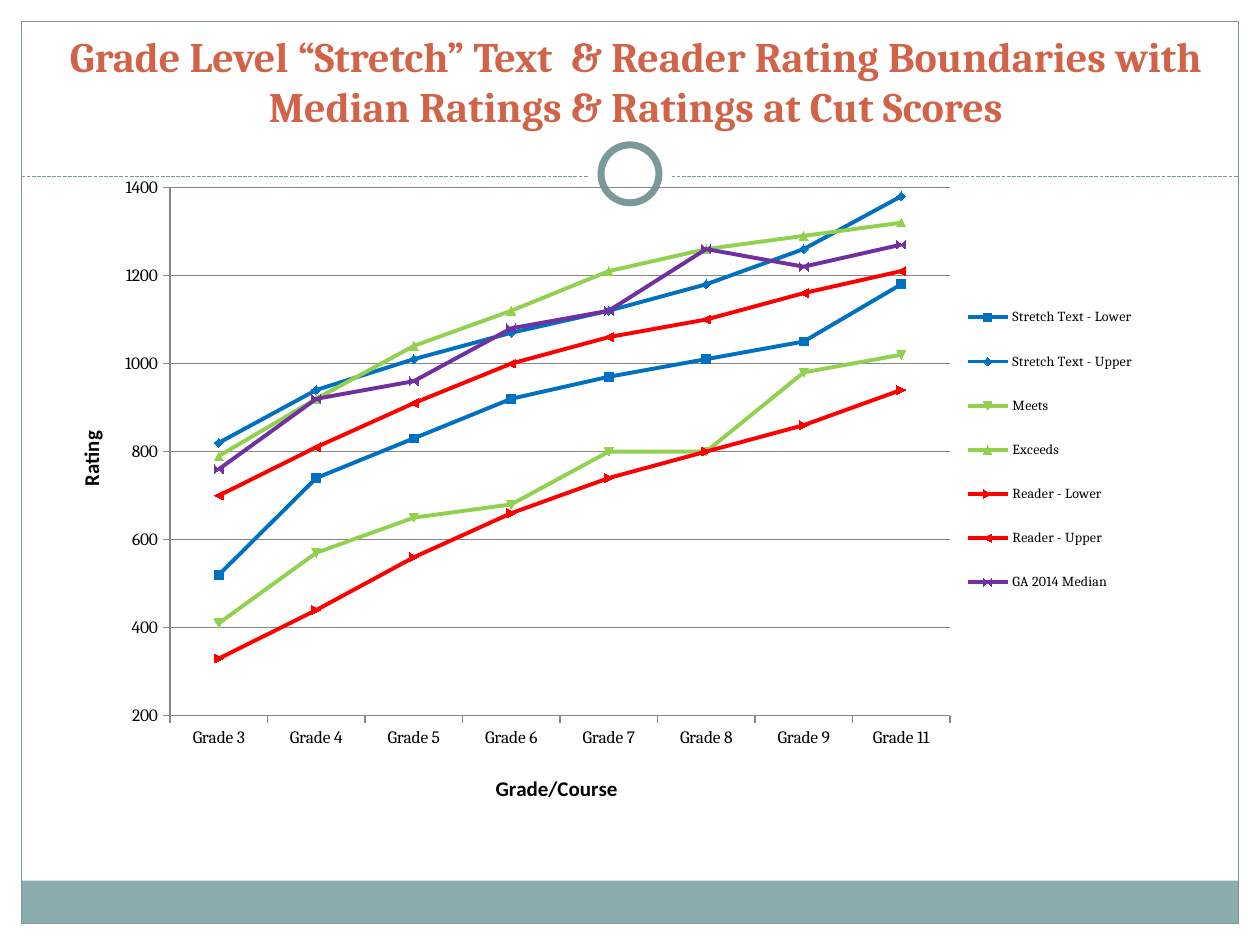
from lxml import etree
from pptx import Presentation
from pptx import util as u
from pptx.chart.data import CategoryChartData
from pptx.dml.color import RGBColor
from pptx.enum import chart as ch, dml, shapes, text
from pptx.oxml.ns import qn

Inches, Pt = u.Inches, u.Pt
TEAL, BAND, CORAL, GREY, BLACK = "7C999A", "8CADAE", "D16349", "868686", "000000"
BLUE, GREEN, RED, PURPLE = "0070C0", "92D050", "FF0000", "7030A0"
GRADES = [f"Grade {number}" for number in (3, 4, 5, 6, 7, 8, 9, 11)]
SERIES = [
    ("Stretch Text - Lower", BLUE, (520, 740, 830, 920, 970, 1010, 1050, 1180)),
    ("Stretch Text - Upper", BLUE, (820, 940, 1010, 1070, 1120, 1180, 1260, 1380)),
    ("Meets", GREEN, (410, 570, 650, 680, 800, 800, 980, 1020)),
    ("Exceeds", GREEN, (790, 920, 1040, 1120, 1210, 1260, 1290, 1320)),
    ("Reader - Lower", RED, (330, 440, 560, 660, 740, 800, 860, 940)),
    ("Reader - Upper", RED, (700, 810, 910, 1000, 1060, 1100, 1160, 1210)),
    ("GA 2014 Median", PURPLE, (760, 920, 960, 1080, 1120, 1260, 1220, 1270)),
]


def rgb(value):
    return RGBColor.from_string(value)


def set_font(font, size, color, name="Cambria", bold=False):
    font.name, font.size, font.bold = name, Pt(size), bold
    font.color.rgb = rgb(color)


def set_line(line, color, width):
    line.color.rgb = rgb(color)
    line.width = Pt(width)


def add_shape(page, kind, box, fill=None, line=None, width=0.75):
    shape = page.shapes.add_shape(kind, *map(Inches, box))
    shape.shadow.inherit = False
    if fill:
        shape.fill.solid()
        shape.fill.fore_color.rgb = rgb(fill)
    else:
        shape.fill.background()
    if line:
        set_line(shape.line, line, width)
    else:
        shape.line.fill.background()


def add_frame(page, box):
    left, top, width, height = box
    right, bottom, middle = left + width, top + height, left + width / 2
    rule, center, band = 1.4, 1.38, 0.34
    rectangle, oval = shapes.MSO_SHAPE.RECTANGLE, shapes.MSO_SHAPE.OVAL
    add_shape(page, rectangle, (left, bottom - band, width, band), BAND)
    add_shape(page, rectangle, box, line=TEAL)
    divider = page.shapes.add_connector(
        shapes.MSO_CONNECTOR.STRAIGHT,
        Inches(left), Inches(rule), Inches(right), Inches(rule))
    set_line(divider.line, TEAL, 0.75)
    divider.line.dash_style = dml.MSO_LINE.SQUARE_DOT
    etree.SubElement(divider._element.spPr, qn("a:effectLst"))
    for size, outline in ((0.67, None), (0.46, TEAL)):
        spot = (middle - size / 2, center - size / 2, size, size)
        add_shape(page, oval, spot, "FFFFFF", outline, 4)


def add_title(page, box, words):
    title = page.shapes.title
    title.left, title.top, title.width, title.height = map(Inches, box)
    frame = title.text_frame
    frame.text = words
    frame.word_wrap = True
    frame.auto_size = text.MSO_AUTO_SIZE.NONE
    frame.vertical_anchor = text.MSO_ANCHOR.BOTTOM
    para = frame.paragraphs[0]
    para.alignment = text.PP_ALIGN.CENTER
    set_font(para.font, 24, CORAL, bold=True)


def set_layout(parent, after, values, inner=False):
    for old in parent.findall(qn("c:layout")):
        parent.remove(old)
    layout = etree.Element(qn("c:layout"))
    manual = etree.SubElement(layout, qn("c:manualLayout"))
    settings = [("layoutTarget", "inner")] if inner else []
    settings += [("xMode", "edge"), ("yMode", "edge")]
    settings += zip("xywh", values)
    for tag, value in settings:
        etree.SubElement(manual, qn(f"c:{tag}")).set("val", str(value))
    if after:
        parent.find(qn(after)).addnext(layout)
    else:
        parent.insert(0, layout)


def style_axis(axis, words, corner):
    axis.major_tick_mark = ch.XL_TICK_MARK.OUTSIDE
    axis.minor_tick_mark = ch.XL_TICK_MARK.NONE
    set_line(axis.format.line, GREY, 0.75)
    set_font(axis.tick_labels.font, 10, BLACK)
    title = axis.axis_title
    title.text_frame.text = words
    set_font(title.text_frame.paragraphs[0].font, 12, BLACK, "Calibri", True)
    set_layout(title._element, "c:tx", corner)


def add_rating_chart(page, box):
    left, top, width, height = box
    data = CategoryChartData(number_format="General")
    data.categories = GRADES
    for name, color, values in SERIES:
        data.add_series(name, values)
    chart = page.shapes.add_chart(
        ch.XL_CHART_TYPE.LINE_MARKERS, *map(Inches, box), data).chart
    set_font(chart.font, 10, BLACK)
    chart.has_title = False
    chart.plots[0].vary_by_categories = False
    for series, (name, color, values) in zip(chart.plots[0].series, SERIES):
        series.smooth = False
        set_line(series.format.line, color, 2.25)
        marker = series.marker
        marker.size = 5
        marker.format.fill.solid()
        marker.format.fill.fore_color.rgb = rgb(color)
        set_line(marker.format.line, color, 0.75)
    style_axis(chart.category_axis, "Grade/Course", (0.39, 0.95))
    rating = chart.value_axis
    style_axis(rating, "Rating", (0, 0.41))
    rating.minimum_scale, rating.maximum_scale, rating.major_unit = 200, 1400, 200
    rating.has_major_gridlines = True
    set_line(rating.major_gridlines.format.line, GREY, 0.75)
    chart.has_legend = True
    legend = chart.legend
    legend.position = ch.XL_LEGEND_POSITION.RIGHT
    legend.include_in_layout = False
    set_font(legend.font, 8, BLACK)
    set_layout(legend._element, "c:legendPos", (0.83, 0.18, 0.16, 0.53))
    plot = (0.77 / width, 0.16 / height, 6.19 / width, 4.23 / height)
    set_layout(chart._chartSpace.chart.plotArea, None, plot, inner=True)


def main():
    deck = Presentation()
    deck.slide_width, deck.slide_height = Inches(10), Inches(7.5)
    page = deck.slides.add_slide(deck.slide_layouts[5])
    add_frame(page, (0.17, 0.17, 9.66, 7.16))
    add_title(page, (0.17, 0.17, 9.75, 0.92),
              "Grade Level “Stretch” Text  & Reader Rating Boundaries "
              "with Median Ratings & Ratings at Cut Scores")
    add_rating_chart(page, (0.58, 1.33, 8.52, 5.08))
    deck.save("out.pptx")


if __name__ == "__main__":
    main()
